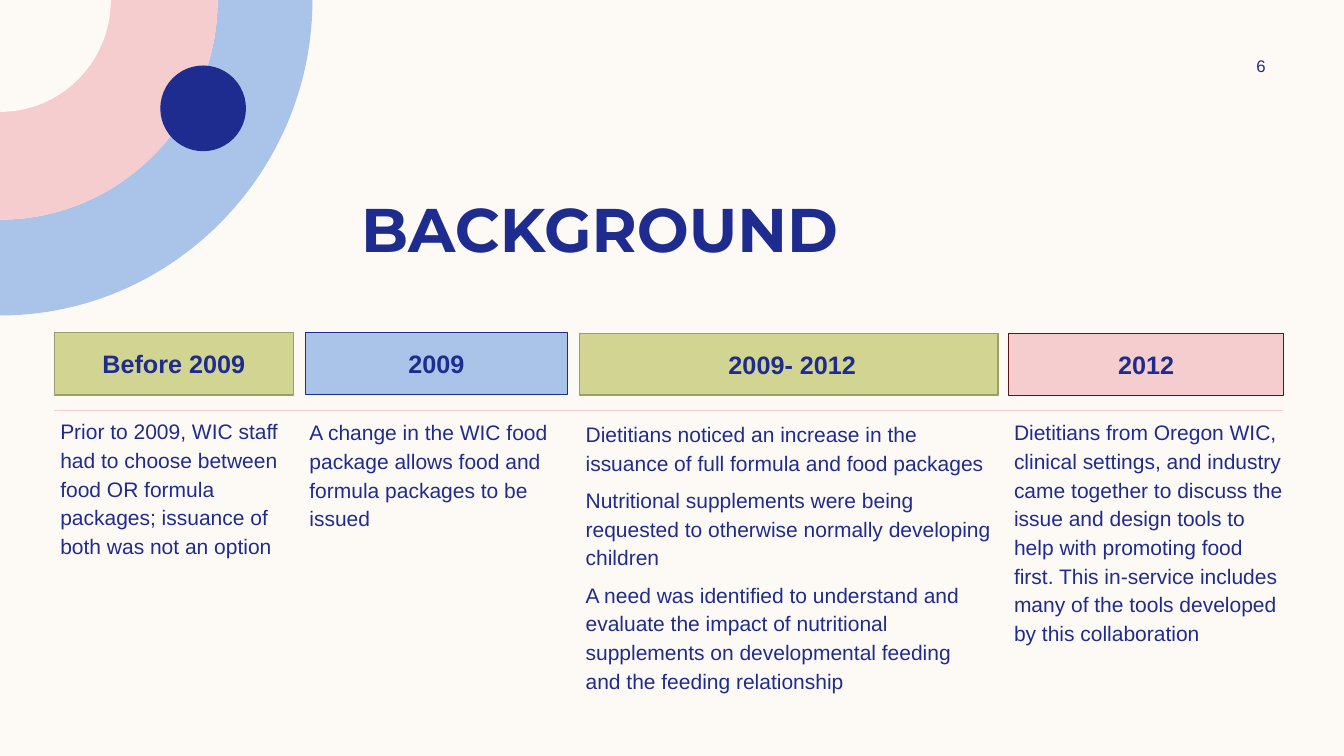
import copy

import pptx
import pptx.dml.color
import pptx.enum.shapes
import pptx.enum.text
import pptx.oxml
import pptx.oxml.ns
import pptx.util

PX = 9144  # EMU per px, 100 px to the inch
ARC = 0.55  # reach of the handles of a quarter ellipse

RGB = pptx.dml.color.RGBColor
CREAM = RGB(0xFD, 0xFA, 0xF6)
NAVY = RGB(0x1F, 0x2C, 0x8F)
BLUE = RGB(0xAA, 0xC3, 0xE8)
PINK = RGB(0xF5, 0xCD, 0xCE)
GREEN = RGB(0xD2, 0xD5, 0x92)
OLIVE = RGB(0x9B, 0x9E, 0x6C)
MAROON = RGB(0x5E, 0x13, 0x15)

SHAPE = pptx.enum.shapes.MSO_SHAPE
ALIGN = pptx.enum.text.PP_ALIGN
ANCHOR = pptx.enum.text.MSO_ANCHOR

TITLE = {"name": "Montserrat", "size": 44, "bold": True}
HEADING = {"name": "Arial", "size": 18, "bold": True}
BODY = {"name": "Arial", "size": 15, "bold": False}
NUMBER = {"name": "Arial", "size": 12, "bold": False}

# Heading, heading box, fill, border, border width, text box, side inset, paragraphs
PERIODS = [
    ("Before 2009", (54, 330, 237, 62), GREEN, OLIVE, 1, (50, 407, 237, 152), 10,
     ["Prior to 2009, WIC staff had to choose between food OR formula packages; "
      "issuance of both was not an option"]),
    ("2009", (303, 330, 260, 61), BLUE, NAVY, 0.75, (307, 408, 256, 237), 0,
     ["A change in the WIC food package allows food and formula packages to be issued"]),
    (" 2009- 2012", (575, 331, 415, 61), GREEN, OLIVE, 1, (581, 410, 409, 342), 0,
     ["Dietitians noticed an increase in the issuance of full formula and food packages",
      "Nutritional supplements were being requested to otherwise normally developing children",
      "A need was identified to understand and evaluate the impact of nutritional "
      "supplements on developmental feeding \vand the feeding relationship"]),
    ("2012", (1001, 331, 272, 61), PINK, MAROON, 0.75, (1006, 408, 272, 253), 0,
     ["Dietitians from Oregon WIC, clinical settings, and industry came together to "
      "discuss the issue and design tools to help with promoting food first. This "
      "in-service includes many of the tools developed by this collaboration"]),
]


def emu(box):
    return [length * PX for length in box]


def write(frame, paragraphs, style, align, anchor, insets=(10, 5), spacing=None, after=0):
    side, top = emu(insets)
    frame_format = {"word_wrap": True, "vertical_anchor": anchor,
                    "margin_left": side, "margin_right": side,
                    "margin_top": top, "margin_bottom": top}
    for key, value in frame_format.items():
        setattr(frame, key, value)
    paragraph_format = {"alignment": align, "line_spacing": spacing,
                        "space_after": pptx.util.Pt(after)}
    for index, text in enumerate(paragraphs):
        paragraph = frame.add_paragraph() if index else frame.paragraphs[0]
        paragraph.text = text
        for key, value in paragraph_format.items():
            setattr(paragraph, key, value)
        for run in paragraph.runs:
            for key, value in style.items():
                setattr(run.font, key, pptx.util.Pt(value) if key == "size" else value)
            run.font.color.rgb = NAVY
        # Line breaks take the size of the text around them
        for line_break in paragraph._p.findall(pptx.oxml.ns.qn("a:br")):
            line_break.append(copy.deepcopy(paragraph.runs[0]._r.rPr))


def paint(shape, fill):
    shape.shadow.inherit = False
    shape.fill.solid()
    shape.fill.fore_color.rgb = fill
    shape.line.fill.background()


def bend(side, start, end):
    """Turn a straight side into a quarter ellipse about the corner (0, 0)."""
    handles = [(start[0] or round(end[0] * ARC), start[1] or round(end[1] * ARC)),
               (end[0] or round(start[0] * ARC), end[1] or round(start[1] * ARC))]
    points = "".join('<a:pt x="%d" y="%d"/>' % point for point in handles + [end])
    curve = pptx.oxml.parse_xml("<a:cubicBezTo %s>%s</a:cubicBezTo>"
                                % (pptx.oxml.ns.nsdecls("a"), points))
    side.getparent().replace(side, curve)


def add_ring(slide, left, top, outer, inner, fill):
    corners = [(outer[0], 0), (0, outer[1])]
    corners += [(0, inner[1]), (inner[0], 0)] if inner else [(0, 0)]
    builder = slide.shapes.build_freeform(*corners[0], scale=PX)
    builder.add_line_segments(corners[1:], close=True)
    ring = builder.convert_to_shape(left * PX, top * PX)
    sides = list(ring._element.iter(pptx.oxml.ns.qn("a:lnTo")))
    bend(sides[0], corners[0], corners[1])
    if inner:
        bend(sides[2], corners[2], corners[3])
    paint(ring, fill)


def add_corner_rings(slide, box):
    left, top, width, height = box
    middle, core = (216, 218), (110, 111)
    for outer, inner, fill in [((width, height), middle, BLUE),
                               (middle, None, PINK), (core, None, CREAM)]:
        add_ring(slide, left, top, outer, inner, fill)
    dot = slide.shapes.add_shape(SHAPE.OVAL, *emu((left + 159, top + 65, 85, 85)))
    paint(dot, NAVY)


def add_label(slide, box, text, style, anchor):
    label = slide.shapes.add_textbox(*emu(box))
    write(label.text_frame, [text], style, ALIGN.CENTER, anchor)


def add_period(slide, heading, heading_box, fill, border, border_width,
               text_box, inset, paragraphs):
    header = slide.shapes.add_shape(SHAPE.RECTANGLE, *emu(heading_box))
    paint(header, fill)
    header.line.color.rgb = border
    header.line.width = pptx.util.Pt(border_width)
    write(header.text_frame, [heading], HEADING, ALIGN.CENTER, ANCHOR.MIDDLE, (0, 0))
    details = slide.shapes.add_textbox(*emu(text_box))
    write(details.text_frame, paragraphs, BODY, ALIGN.LEFT, ANCHOR.TOP, (inset, 5),
          spacing=1.14, after=6 if len(paragraphs) > 1 else 0)


def add_timeline_rule(slide, left, right, y):
    rule = slide.shapes.add_connector(pptx.enum.shapes.MSO_CONNECTOR.STRAIGHT,
                                      *emu((left, y, right, y)))
    rule.line.color.rgb = PINK
    rule.line.width = pptx.util.Pt(0.5)
    rule._element.spPr.append(pptx.oxml.parse_xml(
        "<a:effectLst %s/>" % pptx.oxml.ns.nsdecls("a")))


def add_background_slide(deck):
    slide = deck.slides.add_slide(deck.slide_layouts[6])
    slide.background.fill.solid()
    slide.background.fill.fore_color.rgb = CREAM
    add_corner_rings(slide, (0, 0, 310, 313))
    add_label(slide, (1197, 50, 108, 30), "6", NUMBER, ANCHOR.MIDDLE)
    add_label(slide, (237, 184, 716, 84), "BACKGROUND", TITLE, ANCHOR.TOP)
    add_timeline_rule(slide, 54, 1273, 407)
    for period in PERIODS:
        add_period(slide, *period)


def main():
    deck = pptx.Presentation()
    deck.slide_height = 750 * PX
    deck.slide_width = deck.slide_height * 16 // 9
    add_background_slide(deck)
    deck.save("out.pptx")


if __name__ == "__main__":
    main()
